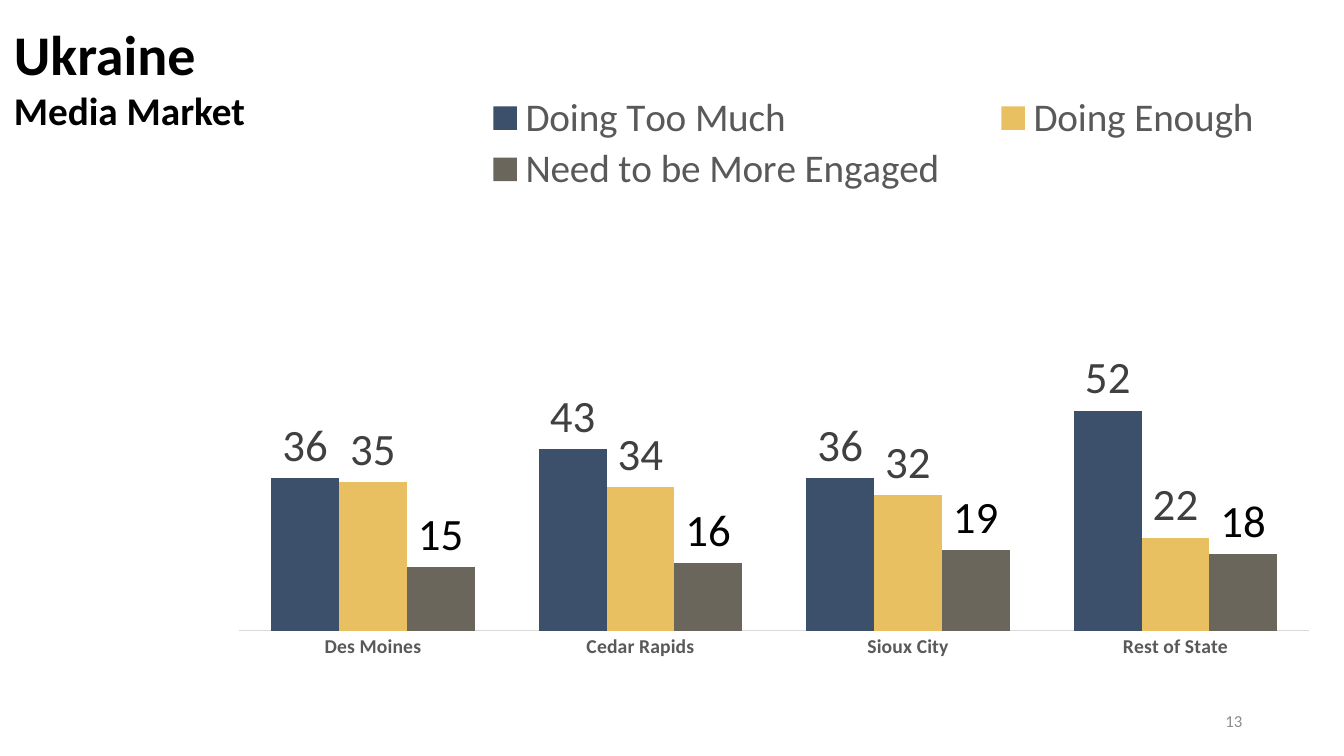
from lxml.etree import SubElement
from pptx import Presentation
from pptx.chart.data import CategoryChartData
from pptx.dml.color import RGBColor
from pptx.enum.chart import XL_CHART_TYPE, XL_LABEL_POSITION, XL_LEGEND_POSITION, XL_TICK_MARK
from pptx.enum.text import MSO_ANCHOR, MSO_AUTO_SIZE, PP_ALIGN
from pptx.oxml.ns import qn
from pptx.util import Inches, Pt

BLACK = RGBColor(0x00, 0x00, 0x00)
DARK_GRAY = RGBColor(0x40, 0x40, 0x40)
TEXT_GRAY = RGBColor(0x59, 0x59, 0x59)
NUMBER_GRAY = RGBColor(0x8C, 0x8C, 0x8C)
AXIS_GRAY = RGBColor(0xD9, 0xD9, 0xD9)
NAVY = RGBColor(0x3C, 0x4F, 0x6B)
GOLD = RGBColor(0xE8, 0xC0, 0x62)
OLIVE = RGBColor(0x6B, 0x66, 0x5B)


def format_font(font, size, color, bold=False):
    for name, value in {"name": "Calibri", "size": Pt(size), "bold": bold}.items():
        setattr(font, name, value)
    font.color.rgb = color


def set_layout(layout, **settings):
    """Place a chart part by fractions of the chart area."""
    for child in list(layout):
        layout.remove(child)
    manual = SubElement(layout, qn("c:manualLayout"))
    for tag, value in settings.items():
        SubElement(manual, qn(f"c:{tag}")).set("val", str(value))


presentation = Presentation()
presentation.slide_width = Inches(13.33)
presentation.slide_height = Inches(7.5)
slide = presentation.slides.add_slide(presentation.slide_layouts[6])

# Column chart
series_rows = [
    ("Doing Too Much", (36, 43, 36, 52), NAVY, DARK_GRAY),
    ("Doing Enough", (35, 34, 32, 22), GOLD, DARK_GRAY),
    ("Need to be More Engaged", (15, 16, 19, 18), OLIVE, BLACK),
]
chart_data = CategoryChartData()
chart_data.categories = ["Des Moines", "Cedar Rapids", "Sioux City", "Rest of State"]
for name, values, _, _ in series_rows:
    chart_data.add_series(name, values)
chart = slide.shapes.add_chart(
    XL_CHART_TYPE.COLUMN_CLUSTERED,
    Inches(2.22), Inches(0.53), Inches(10.92), Inches(6.18), chart_data,
).chart
chart.has_title = False
format_font(chart.font, 10, BLACK)

plot = chart.plots[0]
plot.gap_width = 95
plot.overlap = 0
plot.vary_by_categories = False
for series, (_, _, fill_color, label_color) in zip(plot.series, series_rows):
    series.format.fill.solid()
    series.format.fill.fore_color.rgb = fill_color
    labels = series.data_labels
    labels.show_value = True
    labels.position = XL_LABEL_POSITION.OUTSIDE_END
    format_font(labels.font, 32, label_color)

# Axes
category_axis = chart.category_axis
category_axis.major_tick_mark = XL_TICK_MARK.NONE
category_axis.format.line.color.rgb = AXIS_GRAY
category_axis.format.line.width = Pt(0.75)
format_font(category_axis.tick_labels.font, 14, TEXT_GRAY, bold=True)
value_axis = chart.value_axis
value_axis.minimum_scale = 0
value_axis.maximum_scale = 100
value_axis.has_major_gridlines = False
value_axis.visible = False

# Legend and plot placement
chart.has_legend = True
legend = chart.legend
legend.position = XL_LEGEND_POSITION.TOP
legend.include_in_layout = False
format_font(legend.font, 28, TEXT_GRAY)
legend_layout = legend._element.get_or_add_layout()
set_layout(legend_layout, xMode="edge", yMode="edge", x=0.2, y=0.06, w=0.78, h=0.17)
plot_area = chart._chartSpace.chart.plotArea
plot_layout = plot_area.find(qn("c:layout"))
if plot_layout is None:
    plot_layout = SubElement(plot_area, qn("c:layout"))
    plot_area.insert(0, plot_layout)
set_layout(plot_layout, layoutTarget="inner", xMode="edge", yMode="edge",
           x=0.014, y=0.247, w=0.972, h=0.68)

# Title and slide number
text_boxes = [
    ((0.04, 0.14, 8.26, 1.92), [("Ukraine", 40), ("Media Market", 28)],
     BLACK, True, PP_ALIGN.LEFT, MSO_ANCHOR.TOP),
    ((9.42, 6.95, 3, 0.4), [("13", 12)],
     NUMBER_GRAY, False, PP_ALIGN.RIGHT, MSO_ANCHOR.MIDDLE),
]
for box, lines, color, bold, alignment, anchor in text_boxes:
    frame = slide.shapes.add_textbox(*map(Inches, box)).text_frame
    frame.word_wrap = True
    frame.auto_size = MSO_AUTO_SIZE.NONE
    frame.vertical_anchor = anchor
    frame.text = "\n".join(text for text, _ in lines)
    for paragraph, (_, size) in zip(frame.paragraphs, lines):
        paragraph.alignment = alignment
        format_font(paragraph.runs[0].font, size, color, bold)

presentation.save("out.pptx")
